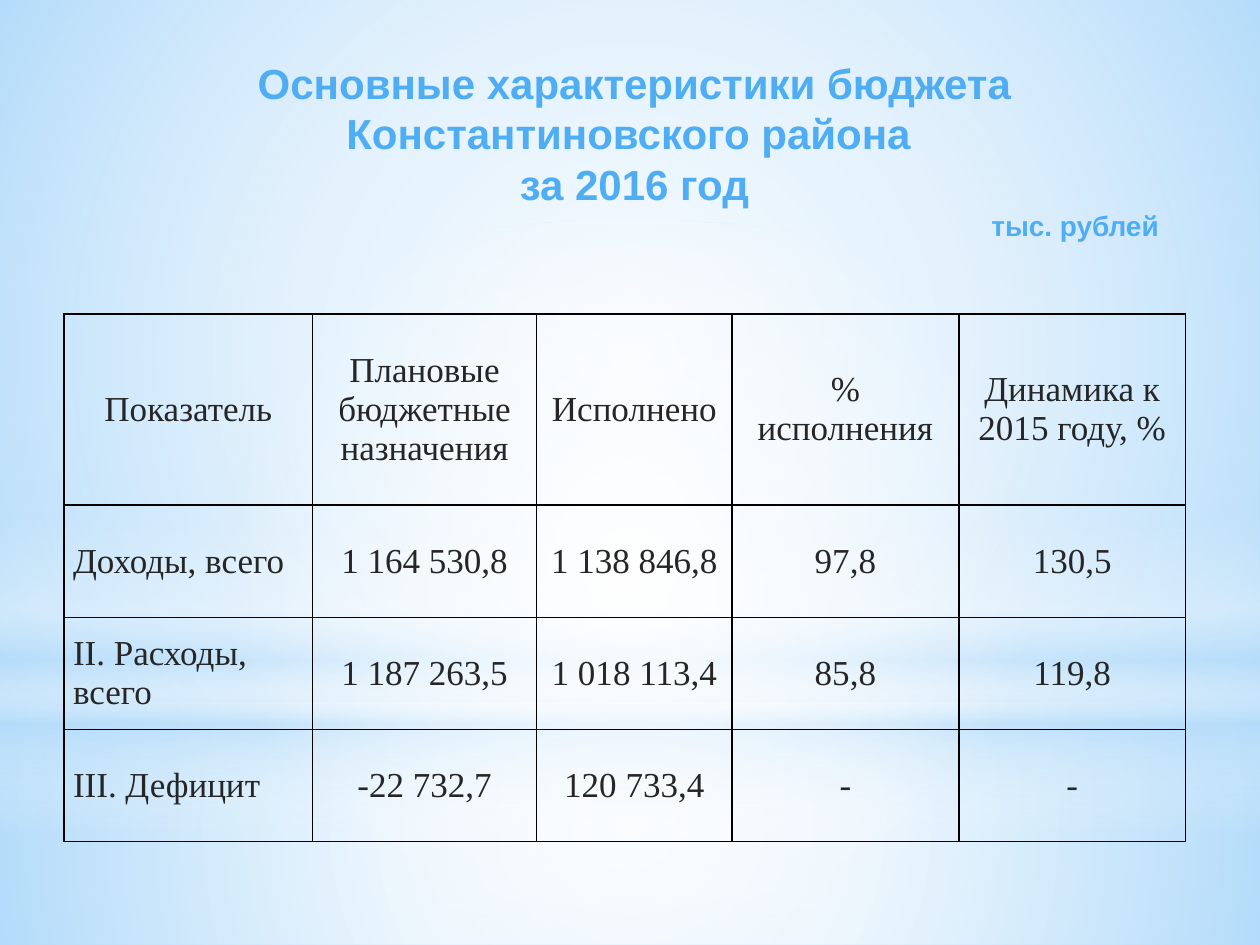
import pptx
import pptx.dml.color
import pptx.enum.shapes
import pptx.enum.text
import pptx.oxml
import pptx.oxml.ns
import pptx.util
from lxml import etree

Inches = pptx.util.Inches
Pt = pptx.util.Pt
RGB = pptx.dml.color.RGBColor.from_string
ALIGN = pptx.enum.text.PP_ALIGN
MIDDLE = pptx.enum.text.MSO_ANCHOR.MIDDLE
SHAPE = pptx.enum.shapes.MSO_SHAPE
NS = pptx.oxml.ns.nsdecls("a")

COLORS = {"sky": "B4DCFA", "white": "FFFFFF", "title": "4FADF3",
          "text": "262626", "border": "000000"}

RADIAL = ('<a:path path="circle"><a:fillToRect l="50000" t="50000" '
          'r="50000" b="50000"/></a:path>')
VERTICAL = '<a:lin ang="5400000" scaled="0"/>'

# shape, top, height, direction, stops of (position %, colour, opacity %)
GLOWS = [
    (SHAPE.RECTANGLE, 5.58, 1.92, RADIAL,
     [(0, "white", 91), (37, "white", 76), (100, "sky", 79)]),
    (SHAPE.RECTANGLE, 0, 5.58, RADIAL,
     [(0, "white", 89), (48, "white", 62), (100, "sky", 79)]),
    (SHAPE.RECTANGLE, 4.12, 2.5, VERTICAL,
     [(0, "white", 0), (29, "white", 30), (45, "sky", 40),
      (55, "white", 26), (65, "sky", 60), (100, "white", 0)]),
    (SHAPE.OVAL, 1.75, 5.58, RADIAL, [(0, "white", 100), (56, "white", 0)]),
]

COLUMN_WIDTHS = [1.97, 1.78, 1.55, 1.8, 1.8]
ROW_HEIGHTS = [1.52, 0.89, 0.89, 0.89]
BUDGET = [
    ["Показатель", "Плановые бюджетные назначения", "Исполнено",
     "% исполнения", "Динамика к 2015 году, %"],
    ["Доходы, всего", "1 164 530,8", "1 138 846,8", "97,8", "130,5"],
    ["II. Расходы, всего", "1 187 263,5", "1 018 113,4", "85,8", "119,8"],
    ["III. Дефицит", "-22 732,7", "120 733,4", "-", "-"],
]


def style_paragraph(paragraph, font, size, color, bold=False):
    for run in paragraph.runs:
        run.font.name = font
        run.font.size = Pt(size)
        run.font.bold = bold
        run.font.color.rgb = RGB(COLORS[color])


def set_gradient(shape, direction, stops):
    shape.fill.background()
    stop_xml = "".join(
        f'<a:gs pos="{position * 1000}"><a:srgbClr val="{COLORS[color]}">'
        f'<a:alpha val="{opacity * 1000}"/></a:srgbClr></a:gs>'
        for position, color, opacity in stops)
    gradient = pptx.oxml.parse_xml(
        f'<a:gradFill {NS} rotWithShape="1"><a:gsLst>{stop_xml}</a:gsLst>'
        f'{direction}</a:gradFill>')
    properties = shape.element.spPr
    properties.replace(properties.find(pptx.oxml.ns.qn("a:noFill")), gradient)


def add_background(slide, left, width):
    slide.background.fill.solid()
    slide.background.fill.fore_color.rgb = RGB(COLORS["sky"])
    for kind, top, height, direction, stops in GLOWS:
        glow = slide.shapes.add_shape(kind, Inches(left), Inches(top),
                                      Inches(width), Inches(height))
        glow.shadow.inherit = False
        set_gradient(glow, direction, stops)
        glow.line.fill.background()


def set_borders(cell):
    properties = cell._tc.get_or_add_tcPr()
    for index, side in enumerate(("lnL", "lnR", "lnT", "lnB")):
        properties.insert(index, pptx.oxml.parse_xml(
            f'<a:{side} {NS} w="{Pt(1)}"><a:solidFill>'
            f'<a:srgbClr val="{COLORS["border"]}"/></a:solidFill></a:{side}>'))


def add_budget_table(slide, left, top):
    table = slide.shapes.add_table(
        len(ROW_HEIGHTS), len(COLUMN_WIDTHS), Inches(left), Inches(top),
        Inches(sum(COLUMN_WIDTHS)), Inches(sum(ROW_HEIGHTS))).table
    table.first_row = table.horz_banding = False
    for column, width in zip(table.columns, COLUMN_WIDTHS):
        column.width = Inches(width)
    for row, height in zip(table.rows, ROW_HEIGHTS):
        row.height = Inches(height)
    for r, values in enumerate(BUDGET):
        for c, value in enumerate(values):
            cell = table.cell(r, c)
            cell.text = value
            cell.vertical_anchor = MIDDLE
            cell.margin_left = cell.margin_right = Inches(0.07)
            cell.margin_top = cell.margin_bottom = 0
            cell.fill.background()
            set_borders(cell)
            paragraph = cell.text_frame.paragraphs[0]
            is_row_label = r > 0 and c == 0
            paragraph.alignment = ALIGN.LEFT if is_row_label else ALIGN.CENTER
            style_paragraph(paragraph, "Times New Roman", 20, "text")


def add_title(slide, left, top, width, height):
    frame = slide.shapes.add_textbox(Inches(left), Inches(top), Inches(width),
                                     Inches(height)).text_frame
    frame.word_wrap = True
    frame.vertical_anchor = MIDDLE
    frame.text = ("Основные характеристики бюджета Константиновского района \n"
                  "за 2016 год\nтыс. рублей")
    *headings, unit = frame.paragraphs
    for heading in headings:
        heading.alignment = ALIGN.CENTER
        style_paragraph(heading, "Arial", 24, "title", bold=True)
    unit.alignment = ALIGN.LEFT
    unit_properties = unit._p.get_or_add_pPr()
    unit_properties.set("marL", str(Inches(7.42)))
    unit_properties.set("indent", "0")
    style_paragraph(unit, "Arial", 16, "title", bold=True)


def main():
    presentation = pptx.Presentation()
    presentation.slide_width = Inches(10)
    presentation.slide_height = Inches(7.5)
    slide = presentation.slides.add_slide(presentation.slide_layouts[6])
    add_background(slide, 0, 10)
    add_budget_table(slide, 0.51, 2.49)
    add_title(slide, 0.35, 0.4, 9.37, 1.58)
    presentation.save("out.pptx")


if __name__ == "__main__":
    main()
